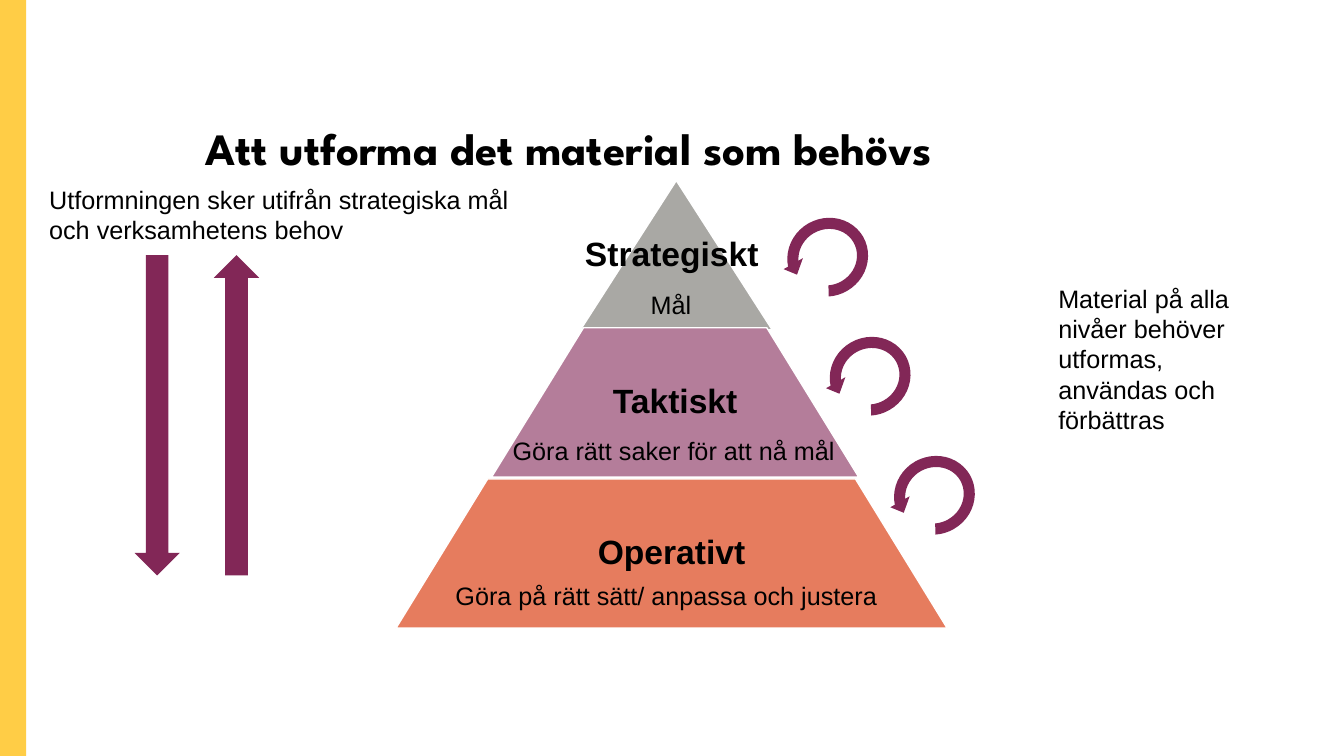
from dataclasses import dataclass

from pptx import Presentation
from pptx import util as u
from pptx.dml.color import RGBColor
from pptx.enum import shapes, text

Cm = u.Cm


@dataclass(frozen=True)
class Theme:
    ink: str = "000000"
    paper: str = "FFFFFF"
    band: str = "FFCD46"
    arrow: str = "822757"
    strategic: str = "A9A8A4"
    tactical: str = "B47D9A"
    operative: str = "E67C5E"
    heading_font: str = "League Spartan"
    body_font: str = "Arial"
    heading: int = 32
    level: int = 24
    body: int = 18


THEME = Theme()


def paint(shape, color, outline=None):
    shape.shadow.inherit = False
    shape.fill.solid()
    shape.fill.fore_color.rgb = RGBColor.from_string(color)
    if outline:
        shape.line.color.rgb = RGBColor.from_string(outline)
        shape.line.width = u.Pt(1)
    else:
        shape.line.fill.background()


def write(paragraph, words, size, font=THEME.body_font, bold=False):
    run = paragraph.add_run()
    run.text = words
    run.font.name = font
    run.font.size = u.Pt(size)
    run.font.bold = bold
    run.font.color.rgb = RGBColor.from_string(THEME.ink)


def add_note(slide, words, left, top, width, height, wrap=True):
    box = slide.shapes.add_textbox(Cm(left), Cm(top), Cm(width), Cm(height))
    box.text_frame.word_wrap = wrap
    box.text_frame.auto_size = text.MSO_AUTO_SIZE.SHAPE_TO_FIT_TEXT
    write(box.text_frame.paragraphs[0], words, THEME.body)


def add_band(slide, left, top, width, height):
    band = slide.shapes.add_shape(shapes.MSO_SHAPE.RECTANGLE,
                                  Cm(left), Cm(top), Cm(width), Cm(height))
    paint(band, THEME.band)


def add_heading(slide, words, left, top, width, height):
    heading = slide.shapes.add_textbox(Cm(left), Cm(top), Cm(width), Cm(height))
    heading.text_frame.word_wrap = True
    paragraph = heading.text_frame.paragraphs[0]
    paragraph.line_spacing = 0.9
    write(paragraph, words, THEME.heading, THEME.heading_font, True)


def add_level(slide, name, color, left, top, width, height, top_width, insets):
    """Draw one pyramid level, a trapezium whose upper side is top_width."""
    slant = (width - top_width) / 2
    corners = [(left + slant, top), (left + slant + top_width, top),
               (left + width, top + height)]
    outline = slide.shapes.build_freeform(Cm(left), Cm(top + height))
    outline.add_line_segments([(Cm(x), Cm(y)) for x, y in corners], close=True)
    level = outline.convert_to_shape()
    paint(level, color, THEME.paper)

    frame = level.text_frame
    frame.word_wrap = True
    frame.vertical_anchor = text.MSO_ANCHOR.MIDDLE
    frame.margin_left, frame.margin_right = (Cm(inset) for inset in insets)
    frame.margin_top = frame.margin_bottom = Cm(0.08)
    paragraph = frame.paragraphs[0]
    paragraph.alignment = text.PP_ALIGN.CENTER
    paragraph.line_spacing = 0.9
    write(paragraph, name, THEME.level, bold=True)


def add_pyramid(slide, left, top):
    level_height = 3.76
    # name, colour, x, y, width, upper width, side insets
    levels = [
        ("Strategiskt", THEME.strategic, 4.65, 0, 4.83, 0, (0.08, 0.31)),
        ("Taktiskt", THEME.tactical, 2.41, 3.71, 9.25, 4.62, (1.7, 1.7)),
        ("Operativt", THEME.operative, 0, 7.52, 13.89, 9.27, (2.51, 2.51)),
    ]
    for name, color, x, y, width, top_width, insets in levels:
        add_level(slide, name, color, left + x, top + y, width,
                  level_height, top_width, insets)

    # caption, x, y, width
    captions = [
        ("Mål", 6.17, 2.61, 1.55),
        ("Göra rätt saker för att nå mål", 2.69, 6.3, 8.71),
        ("Göra på rätt sätt/ anpassa och justera", 1.25, 9.95, 11.23),
    ]
    for caption, x, y, width in captions:
        add_note(slide, caption, left + x, top + y, width, 1.02, wrap=False)


def add_direction_arrows(slide, left, top, length):
    thickness, gap = 1.14, 0.86
    for index, rotation in enumerate((90, 270)):
        center_x = left + thickness / 2 + index * (thickness + gap)
        arrow = slide.shapes.add_shape(
            shapes.MSO_SHAPE.RIGHT_ARROW,
            Cm(center_x - length / 2), Cm(top + (length - thickness) / 2),
            Cm(length), Cm(thickness))
        arrow.rotation = rotation
        paint(arrow, THEME.arrow)


def add_improvement_loops(slide, left, top):
    """Place one circular arrow beside each pyramid level."""
    step = 3
    for index, x in enumerate((0, 1.07, 2.69)):
        loop = slide.shapes.add_shape(
            shapes.MSO_SHAPE.CIRCULAR_ARROW,
            Cm(left + x), Cm(top + index * step), Cm(2.34), Cm(2.24))
        for position, value in enumerate((0.125, 11.42, 204.58, 37.04, 0.125)):
            loop.adjustments[position] = value
        loop.rotation = 150.3
        loop.element.spPr.xfrm.set("flipV", "1")
        paint(loop, THEME.arrow)


def build_material_slide(deck):
    slide = deck.slides.add_slide(deck.slide_layouts[6])
    add_band(slide, 0, 0, 0.66, 19.05)
    add_heading(slide, "Att utforma det material som behövs", 4.93, 3.07, 23.83, 2.69)
    add_pyramid(slide, 9.98, 4.55)
    add_direction_arrows(slide, 3.39, 6.43, 8.07)
    add_note(slide, "Utformningen sker utifrån strategiska mål och verksamhetens behov",
             0.99, 4.52, 12.19, 1.8)
    add_note(slide, "Material på alla nivåer behöver utformas, användas och förbättras",
             26.42, 7.01, 5.94, 4.11)
    add_improvement_loops(slide, 19.69, 5.36)


def main():
    deck = Presentation()
    deck.slide_width, deck.slide_height = Cm(33.87), Cm(19.05)
    build_material_slide(deck)
    deck.save("out.pptx")


if __name__ == "__main__":
    main()
